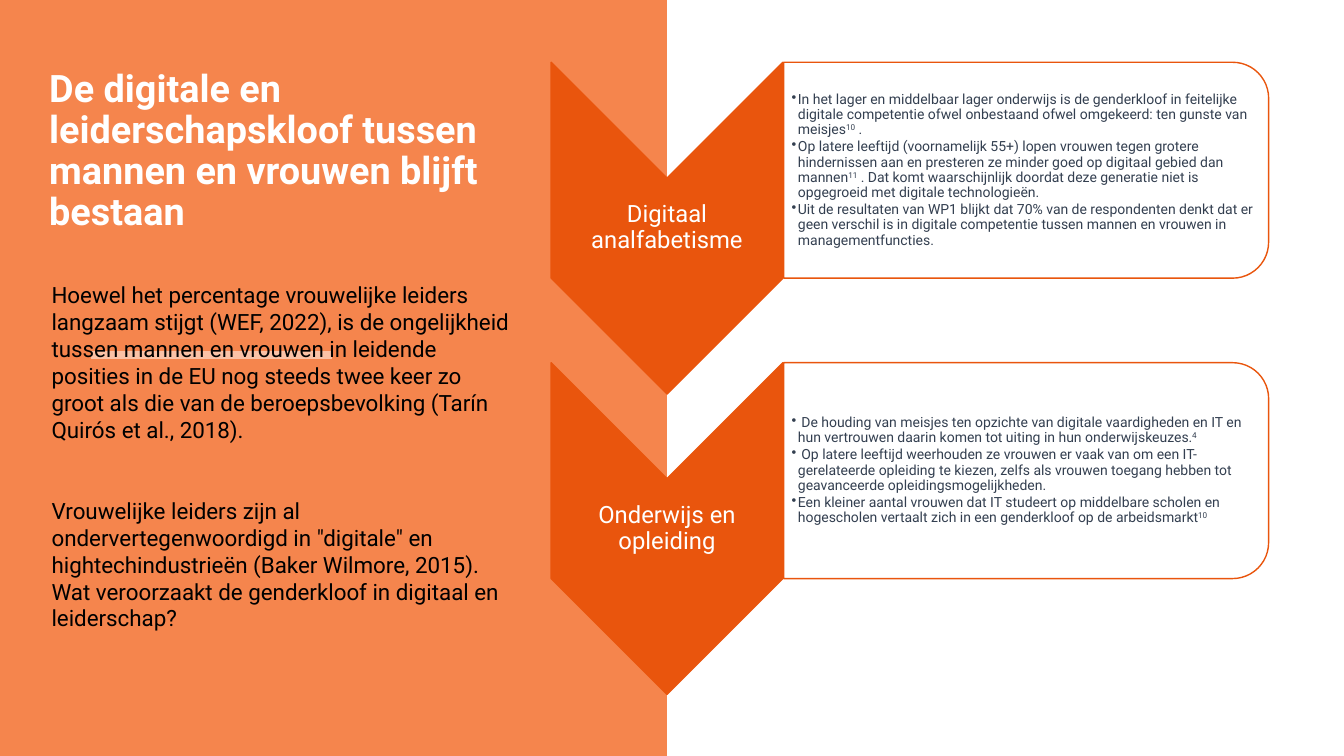
from lxml.etree import SubElement
from pptx import Presentation
from pptx.dml.color import RGBColor
from pptx.enum.shapes import MSO_CONNECTOR, MSO_SHAPE
from pptx.enum.text import MSO_ANCHOR, MSO_AUTO_SIZE, PP_ALIGN
from pptx.oxml.ns import qn
from pptx.util import Cm, Pt

FONT = "Roboto"
COLORS = {"band": "F5854D", "accent": "E9550D", "rule": "FAC2A6",
          "white": "FFFFFF", "black": "000000", "slate": "333F50"}

TITLE = "De digitale en leiderschapskloof tussen mannen en vrouwen blijft bestaan"
INTRO = [
    "Hoewel het percentage vrouwelijke leiders langzaam stijgt (WEF, 2022), is de "
    "ongelijkheid tussen mannen en vrouwen in leidende posities in de EU nog steeds "
    "twee keer zo groot als die van de beroepsbevolking (Tarín Quirós et al., 2018).",
    "Vrouwelijke leiders zijn al ondervertegenwoordigd in \"digitale\" en "
    "hightechindustrieën (Baker Wilmore, 2015). Wat veroorzaakt de genderkloof in "
    "digitaal en leiderschap?",
]
# Text between carets is superscript
TOPICS = [
    ("Digitaal analfabetisme", [
        "In het lager en middelbaar lager onderwijs is de genderkloof in feitelijke "
        "digitale competentie ofwel onbestaand ofwel omgekeerd: ten gunste van "
        "meisjes^10^ .",
        "Op latere leeftijd (voornamelijk 55+) lopen vrouwen tegen grotere hindernissen "
        "aan en presteren ze minder goed op digitaal gebied dan mannen^11^ . Dat komt "
        "waarschijnlijk doordat deze generatie niet is opgegroeid met digitale "
        "technologieën.",
        "Uit de resultaten van WP1 blijkt dat 70% van de respondenten denkt dat er geen "
        "verschil is in digitale competentie tussen mannen en vrouwen in "
        "managementfuncties.",
    ]),
    ("Onderwijs en opleiding", [
        " De houding van meisjes ten opzichte van digitale vaardigheden en IT en hun "
        "vertrouwen daarin komen tot uiting in hun onderwijskeuzes.^4^",
        " Op latere leeftijd weerhouden ze vrouwen er vaak van om een IT-gerelateerde "
        "opleiding te kiezen, zelfs als vrouwen toegang hebben tot geavanceerde "
        "opleidingsmogelijkheden.",
        "Een kleiner aantal vrouwen dat IT studeert op middelbare scholen en hogescholen "
        "vertaalt zich in een genderkloof op de arbeidsmarkt^10^",
    ]),
]


def rgb(name):
    return RGBColor.from_string(COLORS[name])


def place(sp, x, y, w, h):
    sp.left, sp.top, sp.width, sp.height = Cm(x), Cm(y), Cm(w), Cm(h)


def write(sp, paragraphs, size, color, bold=False, align=PP_ALIGN.LEFT,
          anchor=MSO_ANCHOR.TOP, margins=(0, 0.13, 0.25, 0.13), line=1.0,
          gap=0, bullet=False):
    """Fill a shape with formatted paragraphs; gap is the space between them."""
    tf = sp.text_frame
    tf.word_wrap, tf.auto_size, tf.vertical_anchor = True, MSO_AUTO_SIZE.NONE, anchor
    tf.margin_left, tf.margin_top, tf.margin_right, tf.margin_bottom = map(Cm, margins)
    for i, text in enumerate(paragraphs):
        p = tf.add_paragraph() if i else tf.paragraphs[0]
        p.alignment, p.line_spacing = align, line
        p.space_before = Pt(gap if i else 0)
        if bullet:
            pPr = p._p.get_or_add_pPr()
            pPr.set("marL", str(Cm(0.16)))
            pPr.set("indent", str(-Cm(0.16)))
            SubElement(pPr, qn("a:buChar"), char="•")
        for j, part in enumerate(text.split("^")):
            if not part:
                continue
            r = p.add_run()
            r.text = part
            r.font.name, r.font.size, r.font.bold = FONT, Pt(size), bold
            r.font.color.rgb = rgb(color)
            if j % 2:
                r._r.get_or_add_rPr().set("baseline", "30000")


def add_text(s, box, paragraphs, **fmt):
    sp = s.shapes.add_textbox(*map(Cm, box))
    write(sp, paragraphs, **fmt)


def add_turned(s, kind, box, fill):
    """Add a preset shape turned a quarter so that it covers the box."""
    x, y, w, h = box
    sp = s.shapes.add_shape(kind, 0, 0, 0, 0)
    place(sp, x + (w - h) / 2, y + (h - w) / 2, h, w)
    sp.rotation = 90
    sp.shadow.inherit = False
    sp.fill.solid()
    sp.fill.fore_color.rgb = rgb(fill)
    sp.line.color.rgb = rgb("accent")
    sp.line.width = Pt(1)
    return sp


def add_left_band(s, x, y, w, h):
    title = s.shapes.title
    # Background and rule, behind the title
    band = s.shapes.add_shape(MSO_SHAPE.RECTANGLE, Cm(x), Cm(y), Cm(w), Cm(h))
    band.shadow.inherit = False
    band.fill.solid()
    band.fill.fore_color.rgb = rgb("band")
    band.line.fill.background()
    rule = s.shapes.add_connector(MSO_CONNECTOR.STRAIGHT, Cm(x + 8.36), Cm(y + 8.94),
                                  Cm(x + 2.29), Cm(y + 8.94))
    rule.line.color.rgb = rgb("rule")
    rule.line.width = Pt(6)
    SubElement(rule._element.spPr, qn("a:effectLst"))
    for sp in (band, rule):
        title._element.addprevious(sp._element)
    # Title and introduction
    place(title, x + 1.24, y + 1.14, 11.13, 4.88)
    write(title, [TITLE], size=27, color="white", bold=True,
          anchor=MSO_ANCHOR.BOTTOM, line=0.9)
    add_text(s, (x + 1.3, y + 6.96, 11.84, 8.94), INTRO, size=16, color="black", gap=39)


def add_topic(s, x, y, w, h, label, points):
    arrow_w, panel_h = 5.84, 5.44
    panel_x, panel_w = x + arrow_w + 0.02, w - arrow_w - 0.02
    # Arrow with its label between notch and tip
    add_turned(s, MSO_SHAPE.CHEVRON, (x, y, arrow_w, h), "accent")
    add_text(s, (x, y + arrow_w / 2, arrow_w, h - arrow_w), [label], size=17,
             color="white", align=PP_ALIGN.CENTER, anchor=MSO_ANCHOR.MIDDLE,
             margins=(0.03,) * 4, line=0.9)
    # Panel with its points
    panel = add_turned(s, MSO_SHAPE.ROUND_2_SAME_RECTANGLE,
                       (panel_x, y, panel_w, panel_h), "white")
    color = panel._element.spPr.find(qn("a:solidFill"))[0]
    SubElement(color, qn("a:alpha"), val="90000")
    add_text(s, (panel_x, y + 0.27, panel_w - 0.26, panel_h - 0.54), points, size=10,
             color="slate", anchor=MSO_ANCHOR.MIDDLE, line=0.9, gap=1.5,
             margins=(0.2, 0.03, 0.03, 0.03), bullet=True)


def main():
    prs = Presentation()
    prs.slide_width, prs.slide_height = Cm(33.87), Cm(19.05)
    s = prs.slides.add_slide(prs.slide_layouts[5])
    add_left_band(s, 0, 0, 16.81, 19.05)
    for i, (label, points) in enumerate(TOPICS):
        add_topic(s, 13.89, 1.57 + i * 7.57, 18.08, 8.36, label, points)
    prs.save("out.pptx")


if __name__ == "__main__":
    main()
